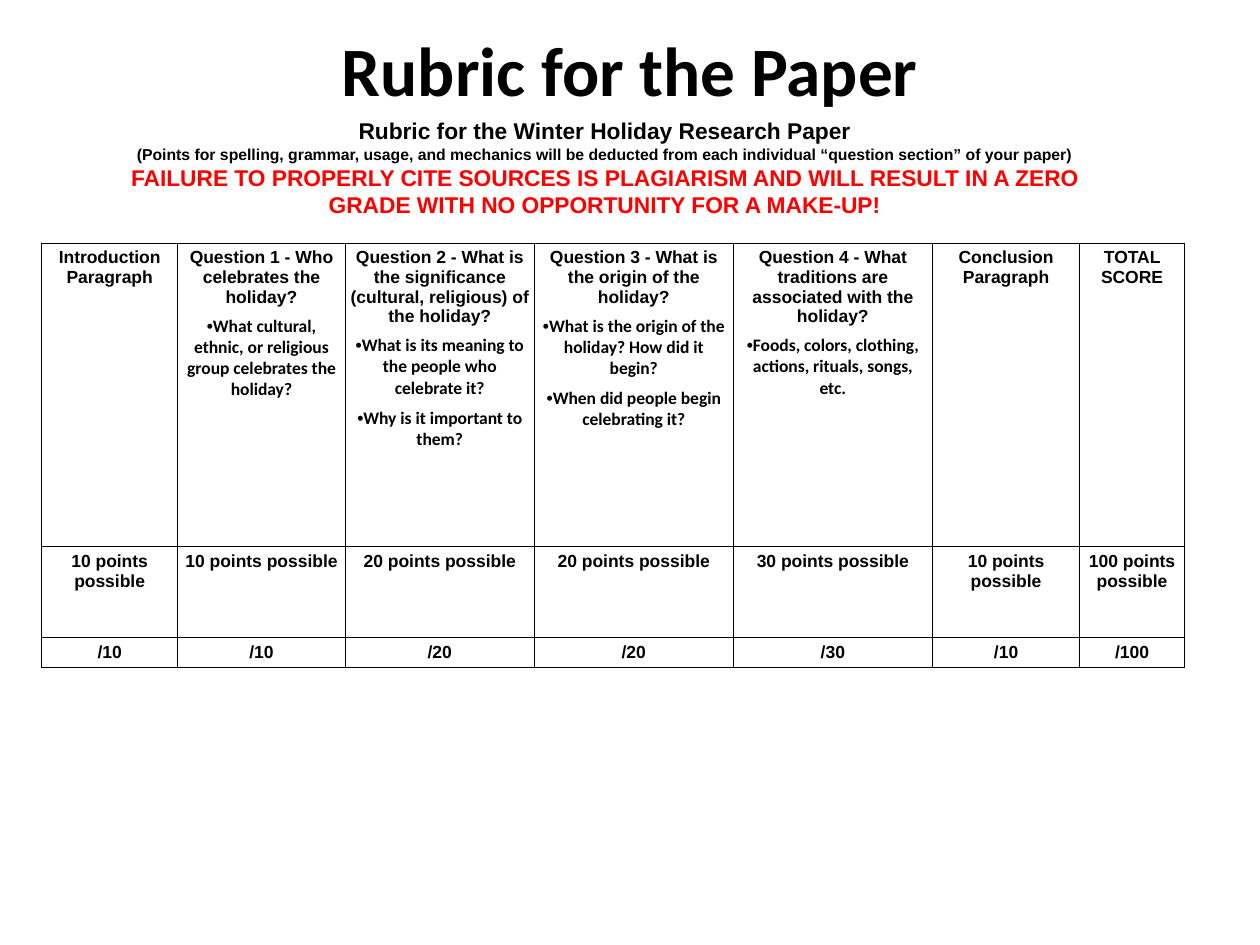
from lxml import etree
from pptx import Presentation
from pptx import util as u
from pptx.dml.color import RGBColor
from pptx.enum import text
from pptx.oxml.ns import qn

BLACK, RED = "000000", "FF0000"

# Heading, guiding questions, points
CRITERIA = [
    ("Introduction Paragraph", [], 10),
    ("Question 1 - Who celebrates the holiday?",
     ["What cultural, ethnic, or religious group celebrates the holiday?"], 10),
    ("Question 2 - What is the significance (cultural, religious) of the holiday?",
     ["What is its meaning to the people who celebrate it?",
      "Why is it important to them?"], 20),
    ("Question 3 - What is the origin of the holiday?",
     ["What is the origin of the holiday? How did it begin?",
      "When did people begin celebrating it?"], 20),
    ("Question 4 - What traditions are associated with the holiday?",
     ["Foods, colors, clothing, actions, rituals, songs, etc."], 30),
    ("Conclusion Paragraph", [], 10),
    ("TOTAL SCORE", [], 100),
]
COLUMN_WIDTHS = [1.08, 1.33, 1.5, 1.58, 1.58, 1.17, 0.83]
ROW_HEIGHTS = [2.41, 0.72, 0.24]

INTRO_LINES = [
    ("Rubric for the Winter Holiday Research Paper", 13, BLACK),
    ("(Points for spelling, grammar, usage, and mechanics will be deducted from "
     "each individual “question section” of your paper)", 9, BLACK),
    ("FAILURE TO PROPERLY CITE SOURCES IS PLAGIARISM AND WILL RESULT IN A ZERO "
     "GRADE WITH NO OPPORTUNITY FOR A MAKE-UP!", 13, RED),
]


def color(hex_value):
    return RGBColor.from_string(hex_value)


def style(paragraph, size, hex_value=BLACK, name="Arial"):
    paragraph.alignment = text.PP_ALIGN.CENTER
    font = paragraph.font
    font.size, font.bold, font.name = u.Pt(size), True, name
    font.color.rgb = color(hex_value)


def next_paragraph(frame, index):
    return frame.add_paragraph() if index else frame.paragraphs[0]


def add_title(slide, left, top, width, height):
    title = slide.shapes.title
    title.left, title.top = u.Inches(left), u.Inches(top)
    title.width, title.height = u.Inches(width), u.Inches(height)
    frame = title.text_frame
    frame.text = "Rubric for the Paper"
    frame.vertical_anchor = text.MSO_ANCHOR.MIDDLE
    style(frame.paragraphs[0], 39.6, name="Calibri")


def add_intro(slide, left, top, width, height):
    box = slide.shapes.add_textbox(*map(u.Inches, (left, top, width, height)))
    frame = box.text_frame
    frame.word_wrap = True
    frame.vertical_anchor = text.MSO_ANCHOR.TOP
    frame.margin_top = u.Inches(0.07)
    for index, (line, size, hex_value) in enumerate(INTRO_LINES):
        paragraph = next_paragraph(frame, index)
        paragraph.text = line
        style(paragraph, size, hex_value)


def add_borders(cell):
    properties = cell._tc.get_or_add_tcPr()
    for position, side in enumerate(("a:lnL", "a:lnR", "a:lnT", "a:lnB")):
        line = etree.Element(qn(side), w=str(u.Pt(0.75)))
        fill = etree.SubElement(line, qn("a:solidFill"))
        etree.SubElement(fill, qn("a:srgbClr"), val=BLACK)
        properties.insert(position, line)


def fill_cell(cell, heading, questions=()):
    cell.fill.background()
    cell.margin_left = cell.margin_right = u.Inches(0.04)
    cell.margin_top = cell.margin_bottom = u.Inches(0.04)
    add_borders(cell)
    frame = cell.text_frame
    frame.text = heading
    style(frame.paragraphs[0], 10)
    for question in questions:
        paragraph = frame.add_paragraph()
        paragraph.space_before = u.Pt(5)
        style(paragraph, 10)
        for part, name in (("•", "Arial"), (question, "Calibri")):
            run = paragraph.add_run()
            run.text, run.font.name = part, name


def add_rubric(slide, left, top, width, height):
    frame = slide.shapes.add_table(len(ROW_HEIGHTS), len(CRITERIA),
                                   *map(u.Inches, (left, top, width, height)))
    table = frame.table
    table.first_row = table.horz_banding = False
    for row, row_height in zip(table.rows, ROW_HEIGHTS):
        row.height = u.Inches(row_height)
    for index, (heading, questions, points) in enumerate(CRITERIA):
        table.columns[index].width = u.Inches(COLUMN_WIDTHS[index])
        fill_cell(table.cell(0, index), heading, questions)
        fill_cell(table.cell(1, index), f"{points} points possible")
        fill_cell(table.cell(2, index), f"/{points}")


def main():
    deck = Presentation()
    deck.slide_width, deck.slide_height = u.Inches(10), u.Inches(7.5)
    slide = deck.slides.add_slide(deck.slide_layouts[5])
    add_title(slide, 0.5, 0.17, 9, 0.75)
    add_rubric(slide, 0.33, 1.93, sum(COLUMN_WIDTHS), sum(ROW_HEIGHTS))
    add_intro(slide, 0.67, 0.86, 8.25, 1.51)
    deck.save("out.pptx")


if __name__ == "__main__":
    main()
